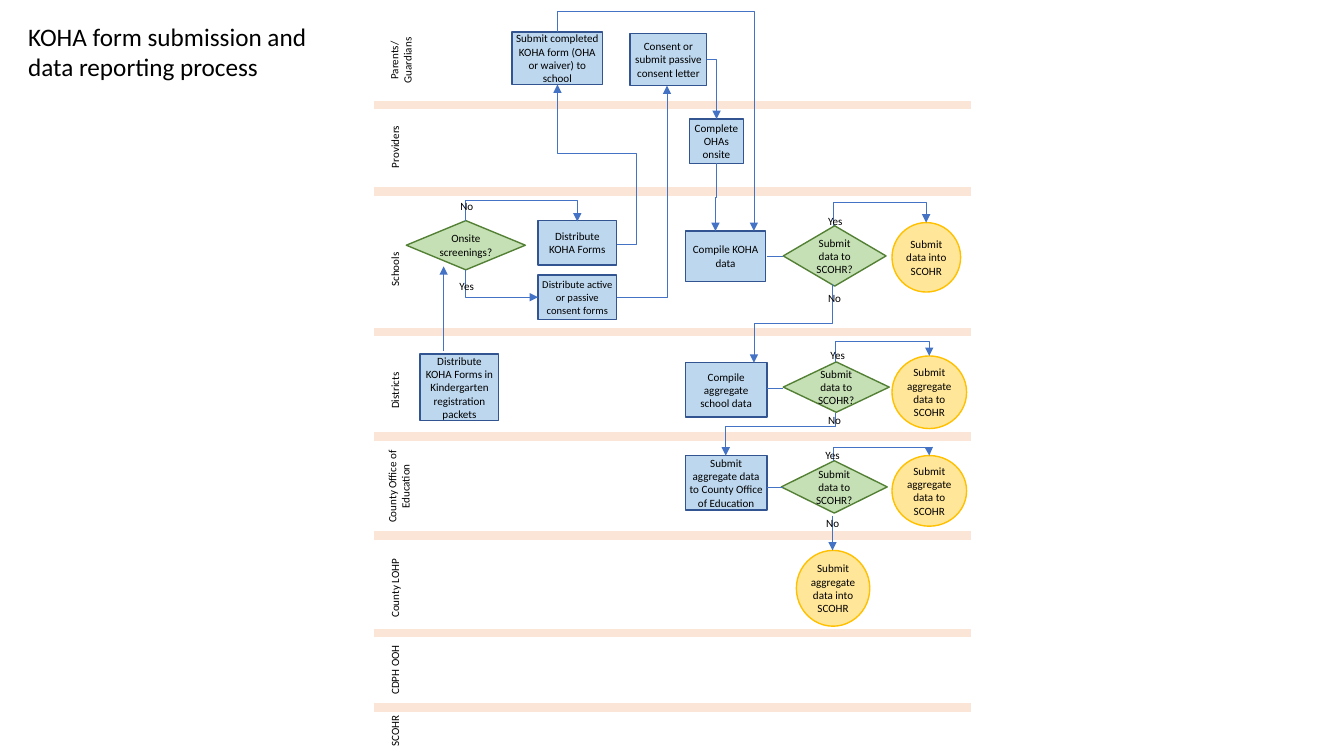
from lxml import etree
from pptx import Presentation
from pptx.dml.color import RGBColor
from pptx.enum import shapes, text
from pptx.oxml.ns import qn
from pptx.util import Cm, Pt

rgb = RGBColor.from_string
kinds = shapes.MSO_SHAPE
deck = Presentation()
deck.slide_width, deck.slide_height = Cm(33.87), Cm(19.05)
slide = deck.slides.add_slide(deck.slide_layouts[6])


def write(shape, words, size, tight=True, align=text.PP_ALIGN.CENTER):
    frame = shape.text_frame
    frame.word_wrap = True
    if tight:
        frame.margin_left = frame.margin_right = Cm(0.08)
        frame.margin_top = frame.margin_bottom = Cm(0.05)
    frame.text = words
    for para in frame.paragraphs:
        para.alignment = align
        para.font.name = "Calibri"
        para.font.size = Pt(size)
        para.font.color.rgb = rgb("000000")
    return frame


def wire(kind, ends, tint="4472C4", width=0.5, arrow=True):
    line = slide.shapes.add_connector(kind, *[Cm(end) for end in ends])
    line.line.color.rgb = rgb(tint)
    line.line.width = Pt(width)
    props = line._element.spPr
    if arrow:
        tail = etree.SubElement(line.line._get_or_add_ln(), qn("a:tailEnd"))
        tail.set("type", "triangle")
    etree.SubElement(props, qn("a:effectLst"))
    return props


straight, elbow = shapes.MSO_CONNECTOR.STRAIGHT, shapes.MSO_CONNECTOR.ELBOW

for y in (2.64, 4.83, 8.36, 11, 13.49, 15.95, 17.83):
    wire(straight, (9.42, y, 24.46, y), "FBE5D6", 6, False)

lanes = [
    ("Parents/\nGuardians", 9.68, 0.61, 0.84, 1.83),
    ("Providers", 9.7, 2.79, 0.51, 1.83),
    ("Schools", 9.7, 5.79, 0.51, 2.01),
    ("Districts", 9.7, 8.84, 0.51, 2.01),
    ("County Office of Education", 9.63, 11.18, 0.84, 2.16),
    ("County LOHP", 9.7, 13.82, 0.51, 2.01),
    ("CDPH OOH", 9.7, 15.88, 0.51, 2.01),
    ("SCOHR", 9.7, 17.42, 0.51, 2.01),
]
for words, *place in lanes:
    box = slide.shapes.add_textbox(*[Cm(n) for n in place])
    frame = write(box, words, 7.9)
    frame._txBody.bodyPr.set("vert", "vert270")

looks = {
    kinds.RECTANGLE: ("BDD7EE", "325491"),
    kinds.DIAMOND: ("C5E0B4", "538035"),
    kinds.OVAL: ("FFE699", "FFC000"),
}
steps = [
    (kinds.RECTANGLE, "Submit completed KOHA form (OHA or waiver) to school", 12.9, 0.81, 2.29, 1.32),
    (kinds.RECTANGLE, "Consent or submit passive consent letter", 15.88, 0.84, 1.93, 1.32),
    (kinds.RECTANGLE, "Complete OHAs onsite", 17.37, 3, 1.37, 1.12),
    (kinds.DIAMOND, "Onsite screenings?", 10.24, 5.56, 3, 1.24),
    (kinds.RECTANGLE, "Distribute KOHA Forms", 13.56, 5.56, 1.98, 1.12),
    (kinds.RECTANGLE, "Distribute active or passive consent forms", 13.56, 6.93, 1.98, 1.12),
    (kinds.RECTANGLE, "Compile KOHA data", 17.27, 5.82, 2.03, 1.27),
    (kinds.DIAMOND, "Submit data to SCOHR?", 19.74, 5.69, 2.59, 1.52),
    (kinds.OVAL, "Submit data into SCOHR", 22.48, 5.61, 1.73, 1.75),
    (kinds.RECTANGLE, "Distribute KOHA Forms in Kindergarten registration packets", 10.59, 8.92, 1.98, 1.68),
    (kinds.RECTANGLE, "Compile aggregate school data", 17.27, 9.14, 2.06, 1.37),
    (kinds.DIAMOND, "Submit data to SCOHR?", 19.74, 9.12, 2.67, 1.27),
    (kinds.OVAL, "Submit aggregate data to SCOHR", 22.48, 8.97, 1.88, 1.83),
    (kinds.RECTANGLE, "Submit aggregate data to County Office of Education", 17.27, 11.48, 2.06, 1.37),
    (kinds.DIAMOND, "Submit data to SCOHR?", 19.69, 11.61, 2.67, 1.32),
    (kinds.OVAL, "Submit aggregate data to SCOHR", 22.48, 11.48, 1.88, 1.78),
    (kinds.OVAL, "Submit aggregate data into SCOHR", 20.07, 13.87, 1.85, 1.91),
]
for kind, words, *place in steps:
    step = slide.shapes.add_shape(kind, *[Cm(n) for n in place])
    step.shadow.inherit = False
    fill, edge = looks[kind]
    step.fill.solid()
    step.fill.fore_color.rgb = rgb(fill)
    step.line.color.rgb = rgb(edge)
    step.line.width = Pt(1)
    frame = write(step, words, 7.5 if "active" in words else 7.9)
    frame.vertical_anchor = text.MSO_ANCHOR.MIDDLE

across = [
    (15.54, 6.15, 14.05, 2.13, 16.03, 3.86),
    (17.81, 1.5, 18.06, 3),
    (15.54, 7.49, 16.81, 2.16),
]
upright = [
    (11.73, 5.56, 14.55, 5.58, 5.05),
    (11.73, 6.81, 13.56, 7.49),
    (18.06, 4.11, 18.03, 5.82, 4.98),
    (14.05, 0.81, 19, 5.82, 0.3),
    (21.01, 5.69, 23.34, 5.61, 5.11),
    (20.98, 7.16, 19, 9.14, 8.15),
    (21.06, 9.12, 23.42, 8.97, 8.61),
    (21.06, 10.41, 18.29, 11.48, 10.74),
    (21.01, 11.61, 23.42, 11.48, 11.28),
]
for route in across + upright:
    x, y, x2, y2, *bends = route
    wide, tall = x2 - x, y2 - y
    ends, spans = (x, y, x2, y2), [(x, wide), (y, tall)]
    turn = 0
    if route in upright:
        turn = 270 if wide > 0 and tall > 0 else 90
        sign = 1 if turn == 90 else -1
        mid, level = (x + x2) / 2, (y + y2) / 2
        half, rise = sign * tall / 2, sign * wide / 2
        ends = (mid - half, level + rise, mid + half, level - rise)
        spans.reverse()
    props = wire(elbow, ends)
    if turn:
        props.find(qn("a:xfrm")).set("rot", str(turn * 60000))
    geom = props.find(qn("a:prstGeom"))
    geom.set("prst", f"bentConnector{len(bends) + 2}")
    for i, (bend, (start, span)) in enumerate(zip(bends, spans), 1):
        guide = etree.SubElement(geom.find(qn("a:avLst")), qn("a:gd"))
        guide.set("name", f"adj{i}")
        guide.set("fmla", f"val {round((bend - start) / span * 100000)}")

for y in (6.45, 9.78, 12.28):
    wire(straight, (19.33, y, 19.74, y), arrow=False)
wire(straight, (20.98, 13, 20.98, 13.87))
wire(straight, (11.18, 8.84, 11.18, 6.71))

notes = [
    ("No", 11.35, 4.9), ("Yes", 11.33, 6.91),
    ("Yes", 20.62, 5.28), ("No", 20.62, 7.21),
    ("Yes", 20.68, 8.66), ("No", 20.62, 10.29),
    ("Yes", 20.55, 11.18), ("No", 20.57, 12.9),
]
for words, x, y in notes:
    box = slide.shapes.add_textbox(Cm(x), Cm(y), Cm(1.24), Cm(0.58))
    write(box, words, 7.9, False, text.PP_ALIGN.LEFT)

title = slide.shapes.add_textbox(Cm(0.46), Cm(0.41), Cm(8.15), Cm(1.8))
write(title, "KOHA form submission and data reporting process", 18, False, text.PP_ALIGN.LEFT)

deck.save("out.pptx")
